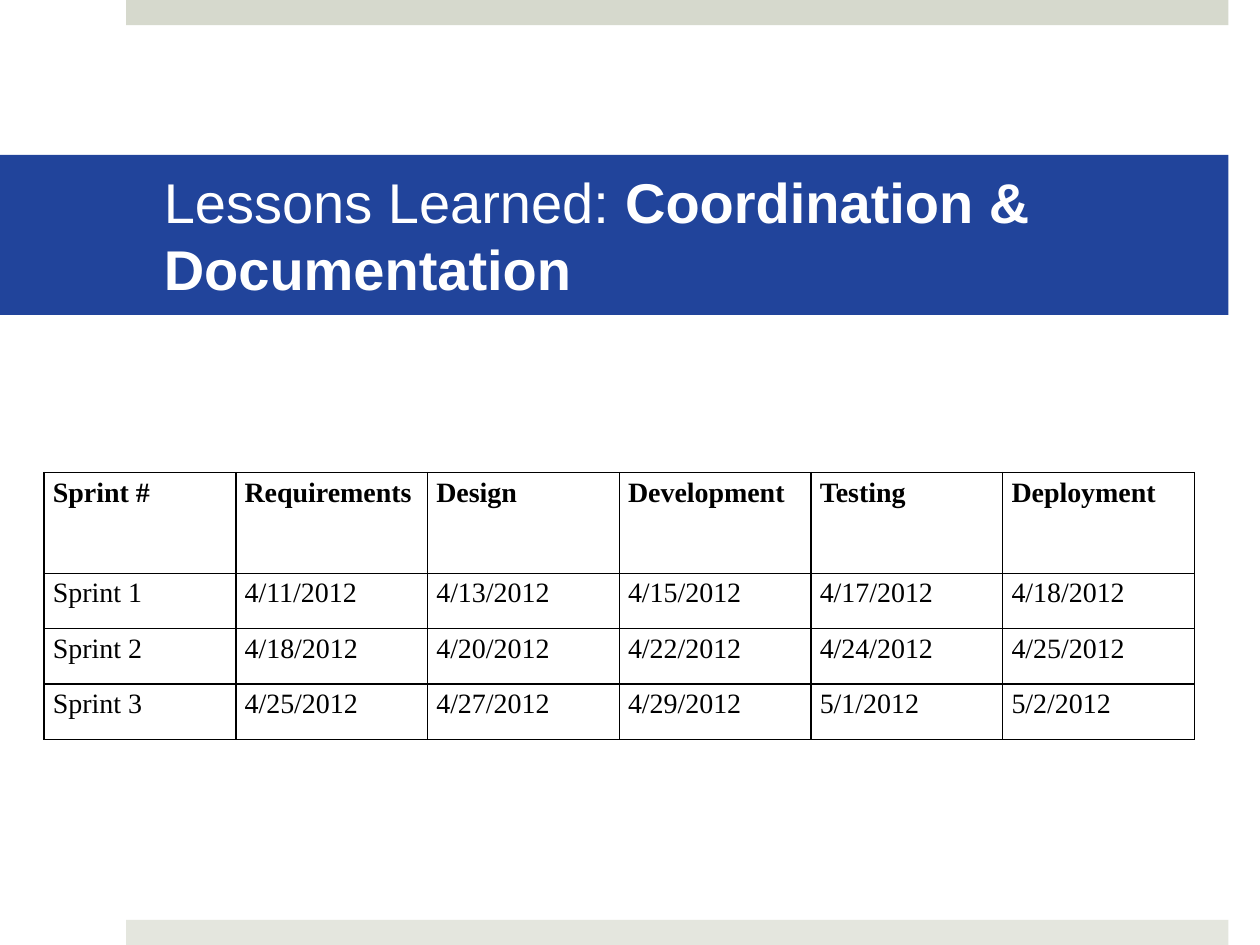
from lxml import etree
from pptx import Presentation
from pptx import util as u
from pptx.dml.color import RGBColor
from pptx.enum import shapes, text
from pptx.oxml import ns


def color(value):
    """Turn a hex string into a colour."""
    return RGBColor.from_string(value)


def apply(target, values):
    """Set each named attribute on the target."""
    for name, value in values.items():
        setattr(target, name, value)


class SprintSlide:
    """Hold the style and the current slide."""

    title_font = {"name": "Arial", "size": u.Pt(32)}
    table_font = {"name": "Times New Roman", "size": u.Pt(16)}
    title_frame = {
        "margin_left": u.Inches(1.3), "margin_right": u.Inches(0.3),
        "margin_top": u.Inches(0.05), "margin_bottom": u.Inches(0.05),
        "vertical_anchor": text.MSO_ANCHOR.MIDDLE,
        "word_wrap": True, "auto_size": text.MSO_AUTO_SIZE.NONE,
    }
    cell_frame = {
        "margin_left": u.Inches(0.07), "margin_right": u.Inches(0.07),
        "margin_top": 0, "margin_bottom": 0,
        "vertical_anchor": text.MSO_ANCHOR.TOP,
    }
    cell_paragraph = {"line_spacing": 1.15, "space_after": u.Pt(10)}

    def __init__(self, deck):
        """Start a slide with a title placeholder."""
        self.slide = deck.slides.add_slide(deck.slide_layouts[5])

    def band(self, top, fill):
        """Draw a plain horizontal band."""
        band = self.slide.shapes.add_shape(
            shapes.MSO_SHAPE.RECTANGLE, u.Inches(1), u.Inches(top),
            u.Inches(8.75), u.Inches(0.2))
        band.shadow.inherit = False
        band.fill.solid()
        band.fill.fore_color.rgb = color(fill)
        band.line.fill.background()

    def words(self, paragraph, wording, font, ink, bold):
        """Add one formatted run."""
        run = paragraph.add_run()
        run.text = wording
        apply(run.font, {**font, "bold": bold})
        run.font.color.rgb = color(ink)

    def title(self, topic, subject):
        """Fill the title bar with a plain and a bold part."""
        heading = self.slide.shapes.title
        apply(heading, {"left": u.Inches(0), "top": u.Inches(1.23),
                        "width": u.Inches(9.75), "height": u.Inches(1.27)})
        heading.fill.solid()
        heading.fill.fore_color.rgb = color("21449B")
        apply(heading.text_frame, self.title_frame)
        line = heading.text_frame.paragraphs[0]
        line.alignment = text.PP_ALIGN.LEFT
        self.words(line, topic, self.title_font, "FFFFFF", False)
        self.words(line, subject, self.title_font, "FFFFFF", True)

    def borders(self, cell):
        """Give a cell thin black borders."""
        properties = cell._tc.get_or_add_tcPr()
        for position, side in enumerate(("lnL", "lnR", "lnT", "lnB")):
            edge = etree.Element(ns.qn(f"a:{side}"), w=str(u.Pt(1)))
            solid = etree.SubElement(edge, ns.qn("a:solidFill"))
            etree.SubElement(solid, ns.qn("a:srgbClr"), val="000000")
            properties.insert(position, edge)

    def table(self, rows, heights):
        """Draw the sprint schedule."""
        schedule = self.slide.shapes.add_table(
            len(rows), len(rows[0]), u.Inches(0.35), u.Inches(3.75),
            u.Inches(9.13), u.Inches(sum(heights))).table
        schedule.horz_banding = False
        for row, height in zip(schedule.rows, heights):
            row.height = u.Inches(height)
        for r, entries in enumerate(rows):
            for c, entry in enumerate(entries):
                cell = schedule.cell(r, c)
                apply(cell, self.cell_frame)
                cell.fill.background()
                self.borders(cell)
                line = cell.text_frame.paragraphs[0]
                apply(line, self.cell_paragraph)
                self.words(line, entry, self.table_font, "000000", r == 0)


SCHEDULE = [
    ["Sprint #", "Requirements", "Design", "Development", "Testing", "Deployment"],
    ["Sprint 1", "4/11/2012", "4/13/2012", "4/15/2012", "4/17/2012", "4/18/2012"],
    ["Sprint 2", "4/18/2012", "4/20/2012", "4/22/2012", "4/24/2012", "4/25/2012"],
    ["Sprint 3", "4/25/2012", "4/27/2012", "4/29/2012", "5/1/2012", "5/2/2012"],
]

deck = Presentation()
apply(deck, {"slide_width": u.Inches(10), "slide_height": u.Inches(7.5)})
lessons = SprintSlide(deck)
lessons.band(0, "D6D9CD")
lessons.band(7.3, "E4E6DE")
lessons.title("Lessons Learned: ", "Coordination & Documentation")
lessons.table(SCHEDULE, [0.8, 0.44, 0.44, 0.44])
deck.save("out.pptx")
